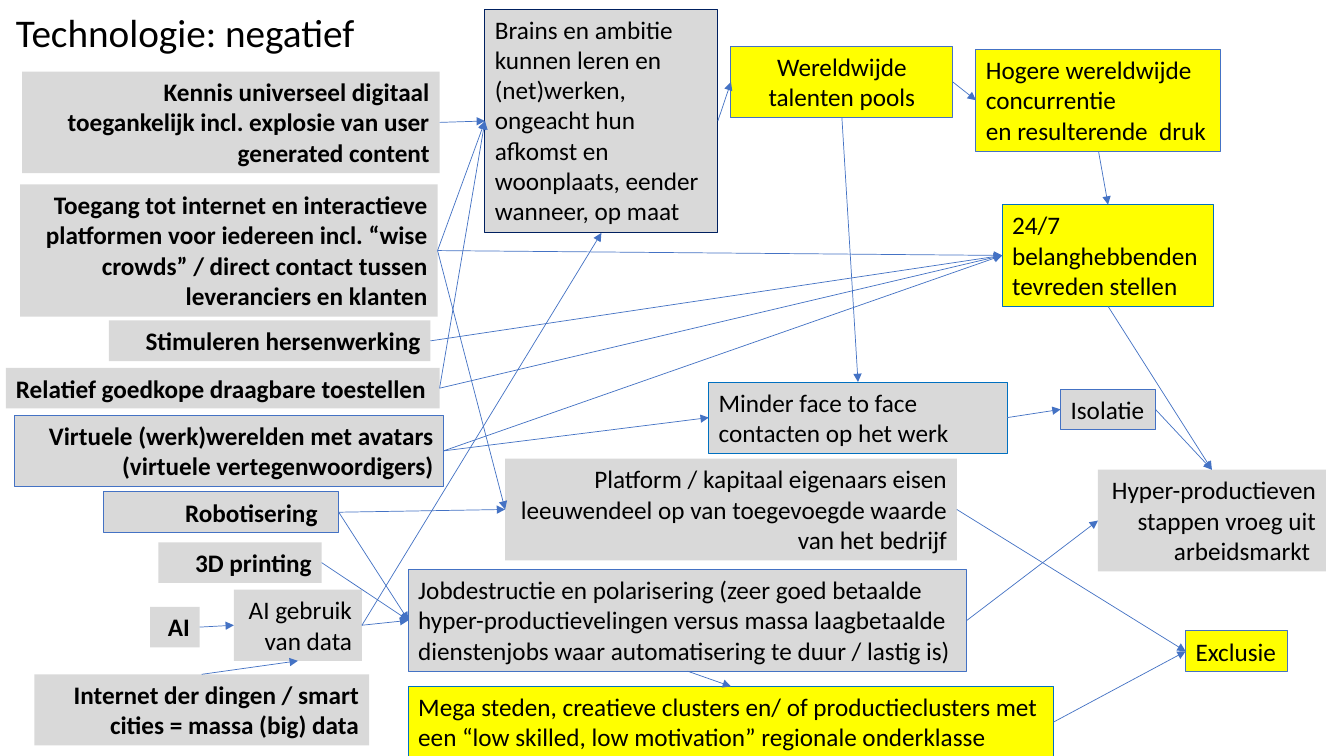
import pptx
import pptx.util
from lxml import etree
from pptx.dml.color import RGBColor
from pptx.enum.shapes import MSO_CONNECTOR, MSO_SHAPE
from pptx.enum.text import MSO_ANCHOR, MSO_AUTO_SIZE, PP_ALIGN
from pptx.oxml.ns import qn
from pptx.util import Inches

COLORS = {
    "text": "000000",
    "grey": "D9D9D9",
    "yellow": "FFFF00",
    "blue": "4472C4",
    "bright": "0070C0",
    "navy": "002060",
}
LEFT, CENTER, RIGHT = PP_ALIGN.LEFT, PP_ALIGN.CENTER, PP_ALIGN.RIGHT
SITES = {"top": 0, "left": 1, "bottom": 2, "right": 3}

# Each card: name, left and top within its region, width, text lines, text, format
DRIVERS = [
    ("knowledge", 0.22, 0, 4.14, 3, "Kennis universeel digitaal toegankelijk incl. explosie van user generated content", {}),
    ("internet", 0.2, 1.12, 4.14, 4, "Toegang tot internet en interactieve platformen voor iedereen incl. “wise crowds” / direct contact tussen leveranciers en klanten", {}),
    ("brainwork", 1.08, 2.47, 3.19, 1, "Stimuleren hersenwerking", {}),
    ("devices", 0.06, 2.94, 4.3, 1, "Relatief goedkope draagbare toestellen", {"align": LEFT, "wrap": False}),
    ("virtual", 0.14, 3.41, 4.26, 2, "Virtuele (werk)werelden met avatars (virtuele vertegenwoordigers)", {"line": "blue"}),
    ("robots", 1.03, 4.17, 2.33, 1, "Robotisering", {"line": "blue", "right_margin": 0.21}),
    ("printing", 1.57, 4.67, 1.62, 1, "3D printing", {}),
    ("ai", 1.49, 5.31, 0.49, 1, "AI", {}),
    ("ai_data", 2.32, 5.14, 1.27, 2, "AI gebruik van data", {"bold": False}),
    ("things", 0.34, 5.98, 3.32, 2, "Internet der dingen / smart cities = massa (big) data", {}),
]
EFFECTS = [
    ("brains", 0.76, 0, 2.31, 7, "Brains en ambitie kunnen leren en (net)werken, ongeacht hun afkomst en woonplaats, eender wanneer, op maat", {"line": "navy"}),
    ("talent", 3.2, 0.37, 2.2, 2, "Wereldwijde talenten pools", {"fill": "yellow", "line": "blue", "align": CENTER}),
    ("contacts", 2.98, 3.7, 2.96, 2, "Minder face to face contacten op het werk", {"line": "bright"}),
    ("platform", 0.96, 4.46, 4.48, 3, "Platform / kapitaal eigenaars eisen leeuwendeel op van toegevoegde waarde van het bedrijf", {"align": RIGHT}),
    ("jobs", 0, 5.56, 5.54, 3, "Jobdestructie en polarisering (zeer goed betaalde hyper-productievelingen versus massa laagbetaalde dienstenjobs waar automatisering te duur / lastig is)", {"line": "blue"}),
    ("cities", 0, 6.72, 6.4, 2, "Mega steden, creatieve clusters en/ of productieclusters met een “low skilled, low motivation” regionale onderklasse", {"fill": "yellow", "line": "bright"}),
]
OUTCOMES = [
    ("competition", 0, 0, 2.43, 3, "Hogere wereldwijde concurrentie\nen resulterende  druk", {"fill": "yellow", "line": "blue"}),
    ("stakeholders", 0.26, 1.54, 2.1, 3, "24/7 belanghebbenden\ntevreden stellen", {"fill": "yellow", "line": "bright"}),
    ("isolation", 0.84, 3.37, 0.94, 1, "Isolatie", {"line": "blue", "wrap": False}),
    ("leavers", 1.21, 4.17, 2.26, 3, "Hyper-productieven stappen vroeg uit arbeidsmarkt ", {"align": RIGHT}),
    ("exclusion", 2.08, 5.77, 1.01, 1, "Exclusie", {"fill": "yellow", "line": "blue", "wrap": False}),
]
ARROWS = [
    ("ai", "right", "ai_data", "left"),
    ("things", "top", "ai_data", "bottom"),
    ("knowledge", "right", "brains", "left"),
    ("internet", "right", "brains", "left"),
    ("devices", "right", "brains", "left"),
    ("ai_data", "right", "brains", "bottom"),
    ("brains", "right", "talent", "left"),
    ("talent", "right", "competition", "left"),
    ("talent", "bottom", "contacts", "top"),
    ("competition", "bottom", "stakeholders", "top"),
    ("internet", "right", "stakeholders", "left"),
    ("brainwork", "right", "stakeholders", "left"),
    ("devices", "right", "stakeholders", "left"),
    ("virtual", "right", "stakeholders", "left"),
    ("virtual", "right", "contacts", "left"),
    ("contacts", "right", "isolation", "left"),
    ("internet", "right", "platform", "left"),
    ("robots", "right", "platform", "left"),
    ("robots", "right", "jobs", "left"),
    ("printing", "right", "jobs", "left"),
    ("ai_data", "right", "jobs", "left"),
    ("jobs", "right", "leavers", "left"),
    ("jobs", "bottom", "cities", "top"),
    ("stakeholders", "bottom", "leavers", "top"),
    ("isolation", "right", "leavers", "top"),
    ("platform", "right", "exclusion", "left"),
    ("cities", "right", "exclusion", "left"),
]


def color(name):
    return RGBColor.from_string(COLORS[name])


def write_text(shape, text, size=18, bold=False, align=LEFT, anchor=MSO_ANCHOR.TOP,
               wrap=True, right_margin=0.1, spacing=1.0):
    frame = shape.text_frame
    frame.word_wrap = wrap
    frame.vertical_anchor = anchor
    frame.margin_right = Inches(right_margin)
    frame.text = text
    for paragraph in frame.paragraphs:
        paragraph.alignment = align
        paragraph.line_spacing = spacing
        font = paragraph.runs[0].font
        font.name = "Calibri"
        font.size = pptx.util.Pt(size)
        font.bold = bold
        font.color.rgb = color("text")


def add_title(slide, box):
    shape = slide.shapes.add_textbox(*map(Inches, box))
    write_text(shape, "Technologie: negatief", size=28, anchor=MSO_ANCHOR.MIDDLE, spacing=0.9)


def add_card(slide, box, text, fill="grey", line=None, **text_format):
    shape = slide.shapes.add_shape(MSO_SHAPE.RECTANGLE, *map(Inches, box))
    shape.shadow.inherit = False
    shape.fill.solid()
    shape.fill.fore_color.rgb = color(fill)
    if line:
        shape.line.color.rgb = color(line)
        shape.line.width = pptx.util.Pt(0.75)
    else:
        shape.line.fill.background()
    write_text(shape, text, **text_format)
    shape.text_frame.auto_size = MSO_AUTO_SIZE.SHAPE_TO_FIT_TEXT
    return shape


def add_region(slide, origin, cards, **defaults):
    """Place the cards relative to the origin and return them by name."""
    left, top = origin
    shapes = {}
    for name, x, y, width, line_count, text, card_format in cards:
        box = (left + x, top + y, width, 0.1 + 0.303 * line_count)
        shapes[name] = add_card(slide, box, text, **{**defaults, **card_format})
    return shapes


def add_arrow(slide, source, source_side, target, target_side):
    connector = slide.shapes.add_connector(MSO_CONNECTOR.STRAIGHT, 0, 0, 0, 0)
    connector.begin_connect(source, SITES[source_side])
    connector.end_connect(target, SITES[target_side])
    connector.line.color.rgb = color("blue")
    connector.line.width = pptx.util.Pt(0.5)
    properties = connector.line._get_or_add_ln()
    etree.SubElement(properties, qn("a:tailEnd"), type="triangle")
    etree.SubElement(properties.getparent(), qn("a:effectLst"))


def main():
    presentation = pptx.Presentation()
    presentation.slide_width = Inches(13.33)
    presentation.slide_height = Inches(7.5)
    slide = presentation.slides.add_slide(presentation.slide_layouts[6])

    add_title(slide, (0.06, -0.38, 11.5, 1.45))
    cards = {
        **add_region(slide, (0, 0.71), DRIVERS, bold=True, align=RIGHT),
        **add_region(slide, (4.05, 0.09), EFFECTS),
        **add_region(slide, (9.68, 0.49), OUTCOMES),
    }
    for source, source_side, target, target_side in ARROWS:
        add_arrow(slide, cards[source], source_side, cards[target], target_side)

    presentation.save("out.pptx")


if __name__ == "__main__":
    main()
